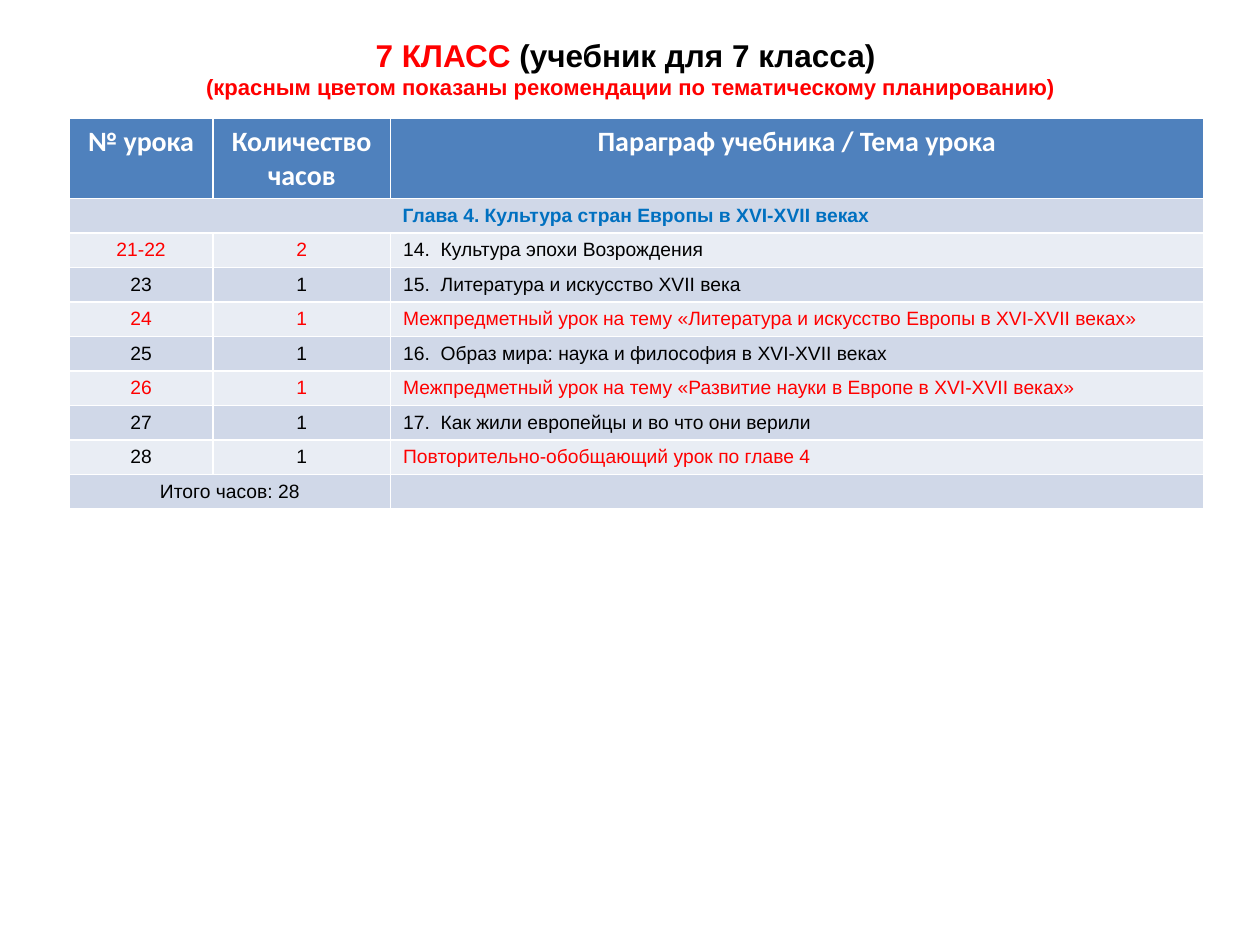
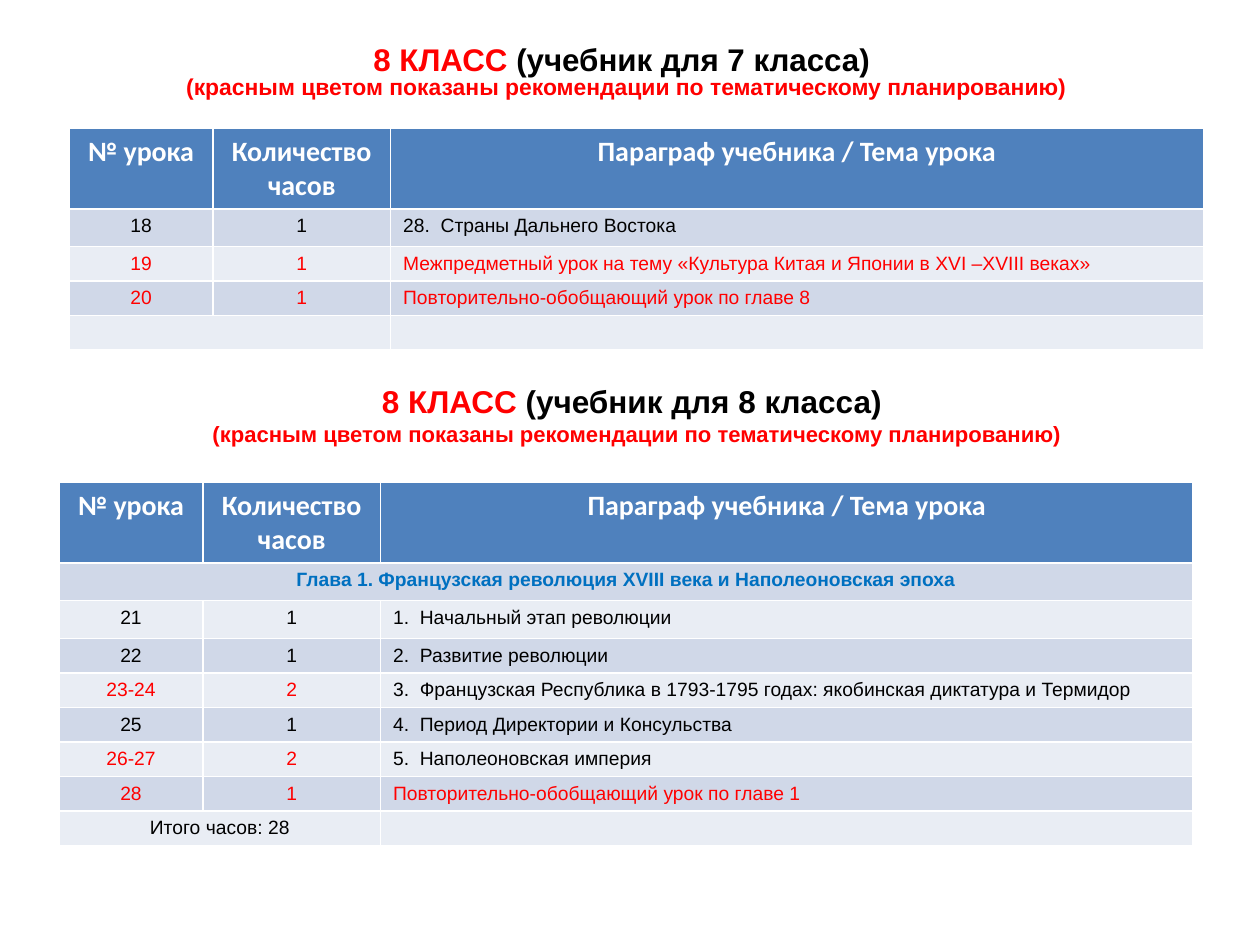
from dataclasses import dataclass

from pptx import Presentation
from pptx.dml.color import RGBColor
from pptx.enum.text import MSO_ANCHOR, PP_ALIGN
from pptx.util import Emu, Inches, Pt


@dataclass(frozen=True)
class Theme:
    heading_font: str = "Calibri"
    text_font: str = "Arial"
    header_size: float = 16
    body_size: float = 11
    black: RGBColor = RGBColor(0, 0, 0)
    white: RGBColor = RGBColor(255, 255, 255)
    red: RGBColor = RGBColor(255, 0, 0)
    chapter: RGBColor = RGBColor(0x00, 0x70, 0xC0)
    header_fill: RGBColor = RGBColor(0x4F, 0x81, 0xBD)
    bands: tuple = (RGBColor(0xD0, 0xD8, 0xE8), RGBColor(0xE9, 0xED, 0xF4))


@dataclass(frozen=True)
class Title:
    grade: str
    textbook: str
    left: float
    top: float
    height: float = 6.4
    grade_size: float = 18
    note_size: float = 12.6
    line_spacing: float = 1.0


@dataclass(frozen=True)
class Row:
    """One table row; span is how many columns its first cell covers."""
    lesson: str = ""
    hours: str = ""
    topic: str = ""
    red_lesson: bool = False
    red_topic: bool = False
    chapter: bool = False
    span: int = 1
    height: float = 3.6


@dataclass(frozen=True)
class Plan:
    left: float
    top: float
    rows: tuple[Row, ...]


THEME = Theme()
WIDTH, HEIGHT = Inches(10), Inches(7.5)
CELL_W, CELL_H = WIDTH / 100, HEIGHT / 100  # 100 by 100 grid
COLUMNS = (11.4, 14.1, 64.5)
HEADER_ROW, TALL_ROW = 8.5, 4
HEADERS = ("№ урока", "Количество часов", "Параграф учебника / Тема урока")
NOTE = "(красным цветом показаны рекомендации по тематическому планированию)"


def x(cols: float) -> Emu:
    return Emu(round(cols * CELL_W))


def y(rows: float) -> Emu:
    return Emu(round(rows * CELL_H))


def chapter(text: str, height: float = 3.6) -> Row:
    return Row(text, chapter=True, span=3, height=height)


def total(text: str = "") -> Row:
    return Row(text, span=2)


def add_title(slide, title: Title) -> None:
    sp = slide.shapes.add_textbox(x(title.left), y(title.top), x(sum(COLUMNS)), y(title.height))
    tf = sp.text_frame
    tf.word_wrap = True
    tf.vertical_anchor = MSO_ANCHOR.MIDDLE
    p = tf.paragraphs[0]
    p.alignment = PP_ALIGN.CENTER
    p.line_spacing = title.line_spacing
    p.font.name, p.font.bold = THEME.text_font, True
    for text, size, color in (
        (f"{title.grade} ", title.grade_size, THEME.red),
        (f"({title.textbook}) ", title.grade_size, THEME.black),
        (NOTE, title.note_size, THEME.red),
    ):
        if text == NOTE:
            p.add_line_break()
        r = p.add_run()
        r.text = text
        r.font.size, r.font.color.rgb = Pt(size), color


def fill_cell(cell, text: str, fill: RGBColor, color: RGBColor, font: str, size: float,
              bold: bool, align: PP_ALIGN) -> None:
    cell.fill.solid()
    cell.fill.fore_color.rgb = fill
    p = cell.text_frame.paragraphs[0]
    p.alignment = align
    p.font.name, p.font.size, p.font.bold = font, Pt(size), bold
    p.font.color.rgb = color
    if text:
        p.add_run().text = text
    else:  # an empty cell takes its line height from the end mark
        p._p.get_or_add_endParaRPr().set("sz", str(size * 100))


def add_plan(slide, plan: Plan) -> None:
    heights = (HEADER_ROW, *(row.height for row in plan.rows))
    table = slide.shapes.add_table(len(heights), len(COLUMNS), x(plan.left), y(plan.top),
                                   x(sum(COLUMNS)), y(sum(heights))).table
    table.horz_banding = False
    for column, width in zip(table.columns, COLUMNS):
        column.width = x(width)
    for table_row, height in zip(table.rows, heights):
        table_row.height = y(height)
    for col, text in enumerate(HEADERS):
        fill_cell(table.cell(0, col), text, THEME.header_fill, THEME.white,
                  THEME.heading_font, THEME.header_size, True, PP_ALIGN.CENTER)
    for i, row in enumerate(plan.rows, start=1):
        lesson_color = (THEME.chapter if row.chapter
                        else THEME.red if row.red_lesson else THEME.black)
        topic_color = THEME.red if row.red_topic else THEME.black
        for col, (text, color, align) in enumerate((
            (row.lesson, lesson_color, PP_ALIGN.CENTER),
            (row.hours, lesson_color, PP_ALIGN.CENTER),
            (row.topic, topic_color, PP_ALIGN.LEFT),
        )):
            cell = table.cell(i, col)
            cell.margin_bottom = Inches(0.04)
            fill_cell(cell, text, THEME.bands[(i - 1) % 2], color,
                      THEME.text_font, THEME.body_size, row.chapter, align)
        if row.span > 1:
            table.cell(i, 0).merge(table.cell(i, row.span - 1))


SLIDES = (
    (
        Title("7 КЛАСС", "учебник для 7 класса", 5, 4),
        Plan(5.5, 12.53, (
            chapter("Глава 4. Культура стран Европы в XVI-XVII веках"),
            Row("21-22", "2", "14.  Культура эпохи Возрождения", red_lesson=True),
            Row("23", "1", "15.  Литература и искусство XVII века"),
            Row("24", "1", "Межпредметный урок на тему «Литература и искусство Европы в XVI-XVII веках»",
                True, True),
            Row("25", "1", "16.  Образ мира: наука и философия в XVI-XVII веках"),
            Row("26", "1", "Межпредметный урок на тему «Развитие науки в Европе в XVI-XVII веках»",
                True, True),
            Row("27", "1", "17.  Как жили европейцы и во что они верили"),
            Row("28", "1", "Повторительно-обобщающий урок по главе 4", red_topic=True),
            total("Итого часов: 28"),
        )),
    ),
    (
        Title("8 КЛАСС", "учебник для 8 класса", 5.5, 40.67),
        Plan(5.5, 13.6, (
            Row("18", "1", "28.  Страны Дальнего Востока", height=TALL_ROW),
            Row("19", "1", "Межпредметный урок на тему «Культура Китая и Японии в XVI –XVIII веках»",
                True, True),
            Row("20", "1", "Повторительно-обобщающий урок по главе 8", True, True),
            total(),
        )),
        Plan(4.7, 51.07, (
            chapter("Глава 1. Французская революция XVIII века и Наполеоновская эпоха", TALL_ROW),
            Row("21", "1", "1.  Начальный этап революции", height=TALL_ROW),
            Row("22", "1", "2.  Развитие революции"),
            Row("23-24", "2",
                "3.  Французская Республика в 1793-1795 годах: якобинская диктатура и Термидор",
                red_lesson=True),
            Row("25", "1", "4.  Период Директории и Консульства"),
            Row("26-27", "2", "5.  Наполеоновская империя", red_lesson=True),
            Row("28", "1", "Повторительно-обобщающий урок по главе 1", True, True),
            total("Итого часов: 28"),
        )),
        Title("8 КЛАСС", "учебник для 7 класса", 4.7, 4.13, 7.33, 17.9, 13.1, 0.8),
    ),
)


def main() -> None:
    prs = Presentation()
    prs.slide_width, prs.slide_height = WIDTH, HEIGHT
    for items in SLIDES:
        slide = prs.slides.add_slide(prs.slide_layouts[6])
        for item in items:
            if isinstance(item, Title):
                add_title(slide, item)
            else:
                add_plan(slide, item)
    prs.save("out.pptx")


if __name__ == "__main__":
    main()
